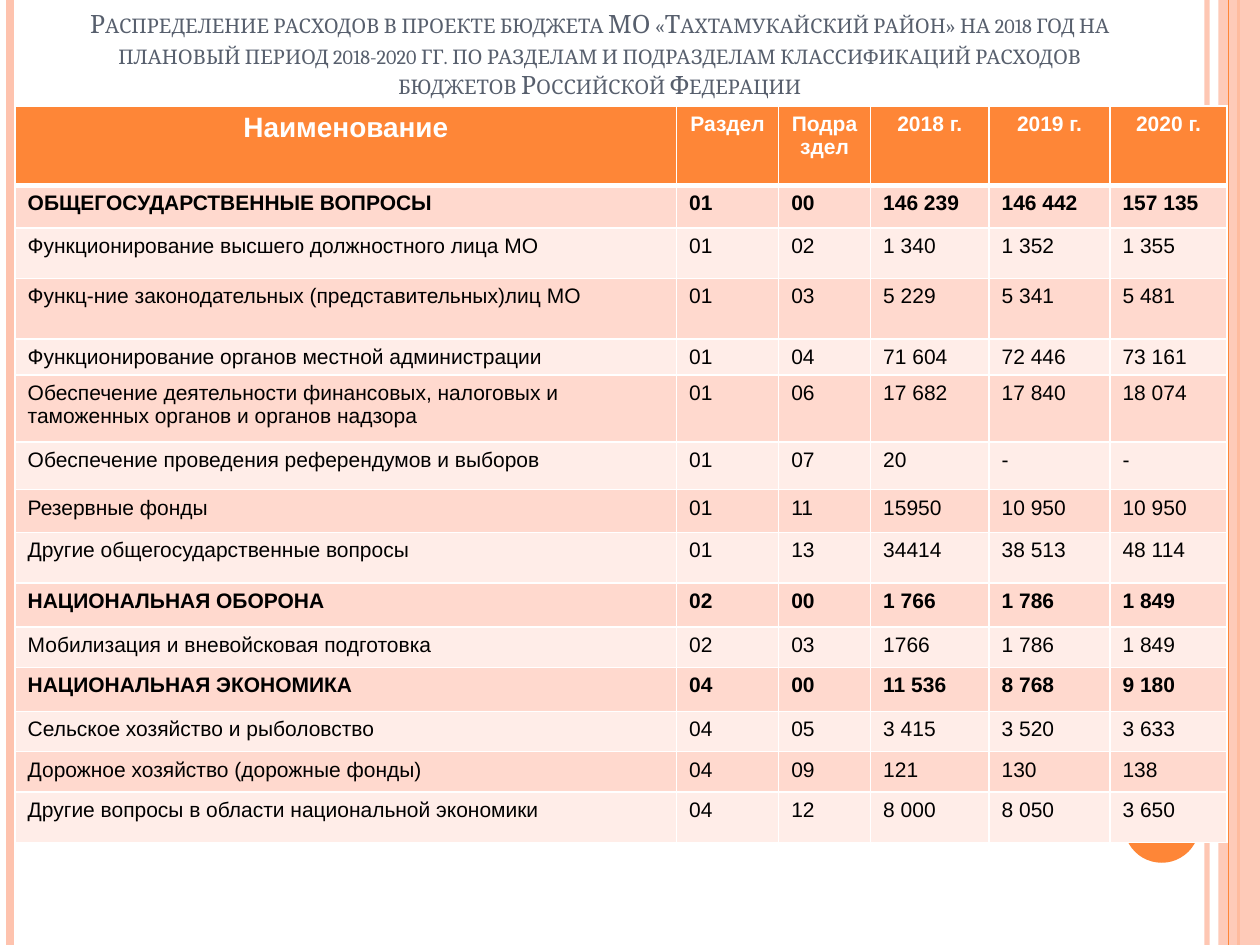
from typing import NamedTuple

from lxml.etree import SubElement
from pptx import Presentation
from pptx.dml.color import RGBColor
from pptx.enum.shapes import MSO_CONNECTOR, MSO_SHAPE
from pptx.enum.text import MSO_ANCHOR, MSO_AUTO_SIZE, PP_ALIGN
from pptx.oxml.ns import qn
from pptx.util import Inches, Pt

ORANGE = RGBColor(0xFE, 0x86, 0x37)
PEACH = RGBColor(0xFE, 0xC3, 0xAE)
BAND_DARK = RGBColor(0xFF, 0xD9, 0xCE)
BAND_LIGHT = RGBColor(0xFF, 0xED, 0xE8)
SLATE = RGBColor(0x57, 0x5F, 0x6D)
WHITE = RGBColor(0xFF, 0xFF, 0xFF)
BLACK = RGBColor(0, 0, 0)

WIDTH, HEIGHT = Inches(10), Inches(7.5)
TABLE_LEFT, TABLE_TOP = Inches(0.12), Inches(0.84)
COLUMNS = (5.25, 0.81, 0.73, 0.94, 0.96, 0.93)
HEADER_HEIGHT = 0.63
HEADER = ("Наименование", "Раздел", "Подраздел", "2018 г.", "2019 г.", "2020 г.")
TITLE = (
    "Распределение расходов в проекте бюджета МО «Тахтамукайский район» "
    "на 2018 год на плановый период 2018-2020 гг. по разделам и подразделам "
    "классификаций расходов бюджетов Российской Федерации"
)


class Stripe(NamedTuple):
    x: float
    color: RGBColor
    weight: float
    alpha: int = 100


class Expense(NamedTuple):
    height: float
    name: str
    section: str
    subsection: str
    y2018: str
    y2019: str
    y2020: str


STRIPES = (
    Stripe(0.958, PEACH, 3, 93),
    Stripe(0.008, PEACH, 4.5),
    Stripe(0.983, ORANGE, 1.5),
    Stripe(0.975, ORANGE, 0.75),
)
EXPENSES = (
    Expense(0.34, "ОБЩЕГОСУДАРСТВЕННЫЕ ВОПРОСЫ", "01", "00", "146 239", "146 442", "157 135"),
    Expense(0.4, "Функционирование высшего должностного лица МО", "01", "02", "1 340", "1 352", "1 355"),
    Expense(0.48, "Функц-ние законодательных (представительных)лиц МО", "01", "03", "5 229", "5 341", "5 481"),
    Expense(0.28, "Функционирование органов местной администрации", "01", "04", "71 604", "72 446", "73 161"),
    Expense(0.53, "Обеспечение деятельности финансовых, налоговых и таможенных органов и органов надзора",
            "01", "06", "17 682", "17 840", "18 074"),
    Expense(0.38, "Обеспечение проведения референдумов и выборов", "01", "07", "20", "-", "-"),
    Expense(0.34, "Резервные фонды", "01", "11", "15950", "10 950", "10 950"),
    Expense(0.4, "Другие общегосударственные вопросы", "01", "13", "34414", "38 513", "48 114"),
    Expense(0.35, "НАЦИОНАЛЬНАЯ ОБОРОНА", "02", "00", "1 766", "1 786", "1 849"),
    Expense(0.32, "Мобилизация и вневойсковая подготовка", "02", "03", "1766", "1 786", "1 849"),
    Expense(0.35, "НАЦИОНАЛЬНАЯ ЭКОНОМИКА", "04", "00", "11 536", "8 768", "9 180"),
    Expense(0.32, "Сельское хозяйство и рыболовство", "04", "05", "3 415", "3 520", "3 633"),
    Expense(0.32, "Дорожное хозяйство (дорожные фонды)", "04", "09", "121", "130", "138"),
    Expense(0.4, "Другие вопросы в области национальной экономики", "04", "12", "8 000", "8 050", "3 650"),
)


def share_x(share: float) -> int:
    return int(WIDTH * share)


def share_y(share: float) -> int:
    return int(HEIGHT * share)


def write(tf, text: str, *, size: float = 12, font: str = "Arial", color: RGBColor = BLACK,
          bold: bool = False, align=PP_ALIGN.LEFT, small_caps: bool = False) -> None:
    p = tf.paragraphs[0]
    p.alignment = align
    r = p.add_run()
    r.text = text
    r.font.size, r.font.name, r.font.bold = Pt(size), font, bold
    r.font.color.rgb = color
    if small_caps:
        r.font._element.set("cap", "small")


def set_alpha(fill_parent, percent: int) -> None:
    color = next(fill_parent.iter(qn("a:srgbClr")))
    SubElement(color, qn("a:alpha")).set("val", str(percent * 1000))


def add_stripe(slide, stripe: Stripe) -> None:
    x = share_x(stripe.x)
    line = slide.shapes.add_connector(MSO_CONNECTOR.STRAIGHT, x, 0, x, HEIGHT)
    line.line.color.rgb = stripe.color
    line.line.width = Pt(stripe.weight)
    sp_pr = line._element.spPr
    if stripe.alpha < 100:
        set_alpha(sp_pr, stripe.alpha)
    SubElement(sp_pr, qn("a:effectLst"))


def add_plain(slide, kind, left: float, top: float, width: float, height: float,
              color: RGBColor, alpha: int = 100) -> None:
    sp = slide.shapes.add_shape(kind, share_x(left), share_y(top), share_x(width), share_y(height))
    sp.shadow.inherit = False
    sp.fill.solid()
    sp.fill.fore_color.rgb = color
    sp.line.fill.background()
    if alpha < 100:
        set_alpha(sp._element.spPr, alpha)


def set_borders(cell, bottom: float, top: float) -> None:
    tc_pr = cell._tc.get_or_add_tcPr()
    sides = (("a:lnL", 1), ("a:lnR", 1), ("a:lnT", top), ("a:lnB", bottom))
    for i, (tag, weight) in enumerate(sides):
        ln = SubElement(tc_pr, qn(tag), w=str(int(Pt(weight))))
        fill = SubElement(ln, qn("a:solidFill"))
        SubElement(fill, qn("a:srgbClr"), val=str(WHITE))
        tc_pr.insert(i, ln)


def fill_row(table, index: int, texts: tuple[str, ...], band: RGBColor, **text_format) -> None:
    for col, text in enumerate(texts):
        cell = table.cell(index, col)
        cell.fill.solid()
        cell.fill.fore_color.rgb = band
        set_borders(cell, bottom=1 if index else 3, top=3 if index == 1 else 1)
        size = 16 if index == col == 0 else 12
        write(cell.text_frame, text, size=size, **text_format)


def add_budget_table(slide) -> None:
    heights = (HEADER_HEIGHT, *(e.height for e in EXPENSES))
    table = slide.shapes.add_table(
        len(heights), len(COLUMNS), TABLE_LEFT, TABLE_TOP,
        Inches(sum(COLUMNS)), Inches(sum(heights))).table
    for column, width in zip(table.columns, COLUMNS):
        column.width = Inches(width)
    for row, height in zip(table.rows, heights):
        row.height = Inches(height)
    fill_row(table, 0, HEADER, ORANGE, color=WHITE, bold=True, align=PP_ALIGN.CENTER)
    for i, expense in enumerate(EXPENSES, start=1):
        band = BAND_DARK if i % 2 else BAND_LIGHT
        fill_row(table, i, expense[1:], band, bold=expense.subsection == "00")


def set_title(slide) -> None:
    title = slide.shapes.title
    title.left, title.top = share_x(0.05), 0
    title.width, title.height = share_x(0.852), share_y(0.112)
    tf = title.text_frame
    tf.word_wrap = True
    tf.auto_size = MSO_AUTO_SIZE.NONE
    tf.vertical_anchor = MSO_ANCHOR.BOTTOM
    write(tf, TITLE, size=14.4, font="Cambria", color=SLATE, align=PP_ALIGN.CENTER, small_caps=True)


def main() -> None:
    prs = Presentation()
    prs.slide_width, prs.slide_height = WIDTH, HEIGHT
    slide = prs.slides.add_slide(prs.slide_layouts[5])
    for stripe in STRIPES[:3]:
        add_stripe(slide, stripe)
    add_plain(slide, MSO_SHAPE.RECTANGLE, 0.967, 0, 0.033, 1, PEACH, alpha=87)
    add_stripe(slide, STRIPES[3])
    add_plain(slide, MSO_SHAPE.OVAL, 0.892, 0.833, 0.06, 0.08, ORANGE)
    set_title(slide)
    add_budget_table(slide)
    prs.save("out.pptx")


if __name__ == "__main__":
    main()
